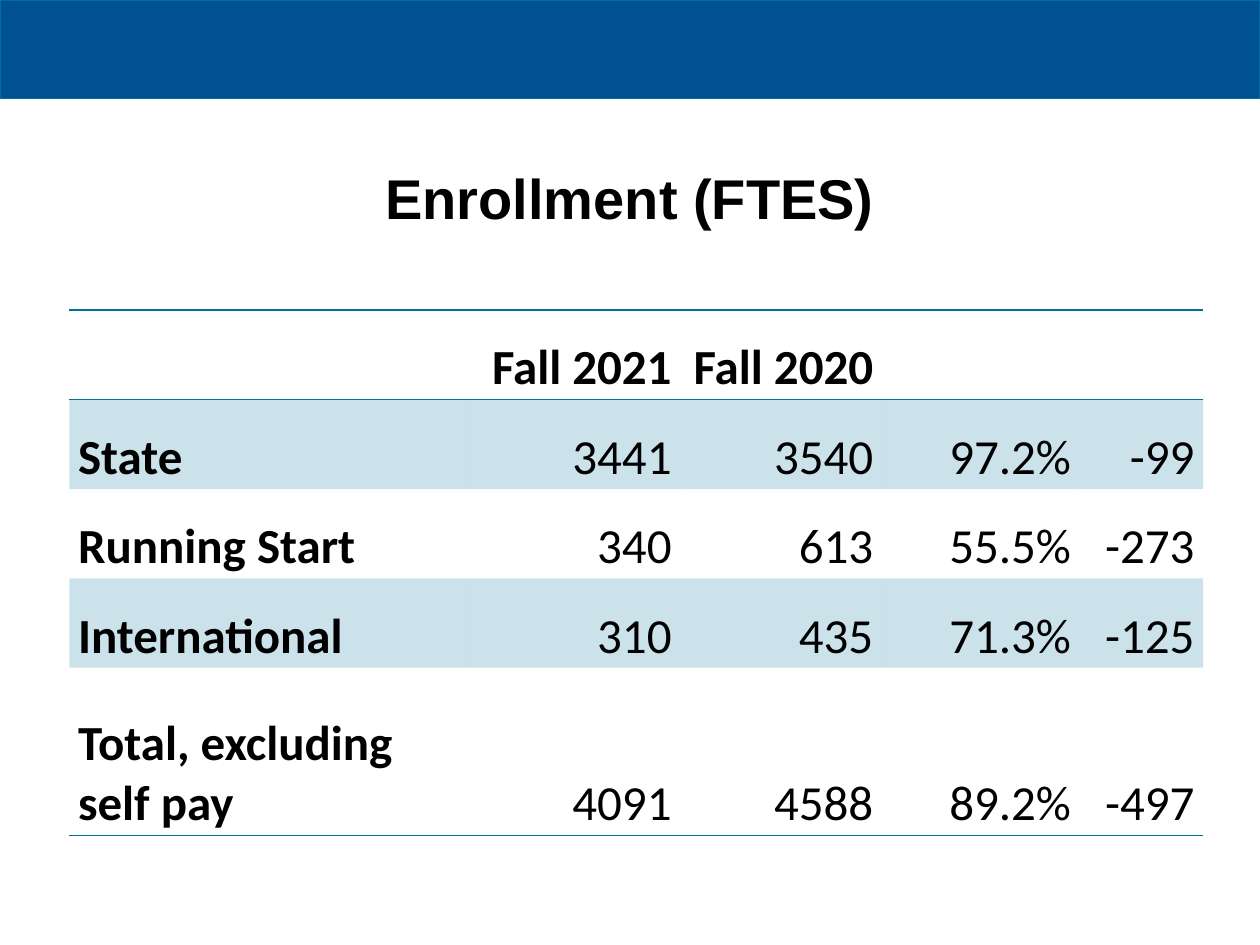
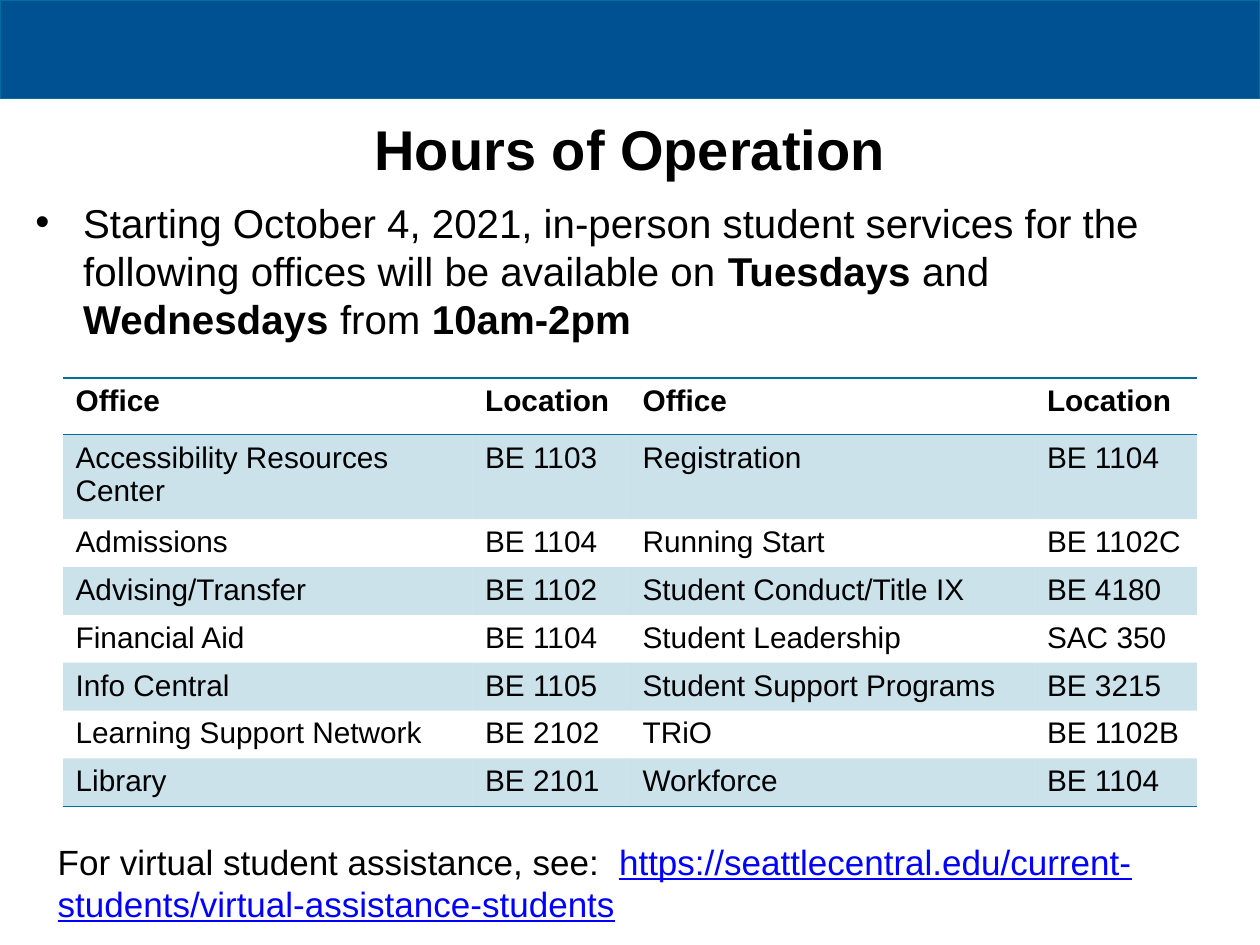
"""Build two college slides on enrollment and office hours."""
from dataclasses import dataclass

from lxml import etree
from pptx import Presentation
from pptx.dml.color import RGBColor
from pptx.enum.shapes import MSO_SHAPE
from pptx.enum.text import MSO_ANCHOR, MSO_AUTO_SIZE, PP_ALIGN
from pptx.oxml.ns import qn
from pptx.util import Emu, Pt

RECT = MSO_SHAPE.RECTANGLE
TOP, MIDDLE, BOTTOM = MSO_ANCHOR.TOP, MSO_ANCHOR.MIDDLE, MSO_ANCHOR.BOTTOM
LEFT, CENTER, RIGHT = PP_ALIGN.LEFT, PP_ALIGN.CENTER, PP_ALIGN.RIGHT
FIXED = MSO_AUTO_SIZE.NONE
SCALE = 9144
WIDE, HIGH = 1000, 750
PLAIN_GRID = "{2D5ABB26-0587-4C30-8999-92F81FD0307C}"
HOLD, LIST = 5, 1


@dataclass(frozen=True)
class Theme:
    ink: str = "000000"
    band: str = "005192"
    edge: str = "006F9B"
    rule: str = "00719F"
    link: str = "0000FF"
    tint: int = 20
    sans: str = "Arial"
    grid: str = "Calibri"
    title: int = 32
    count: int = 28
    body: int = 23
    note: int = 20
    cell: int = 17


def px(size):
    return Emu(size * SCALE)


def paint(run, size, face, color, bold=False, line=False):
    font = run.font
    font.size, font.name = Pt(size), face
    font.bold, font.underline = bold, line
    font.color.rgb = RGBColor.from_string(color)


class Deck:
    def __init__(self, theme):
        self.theme = theme
        self.show = Presentation()
        self.show.slide_width, self.show.slide_height = px(WIDE), px(HIGH)
        self.slide = None

    def page(self, kind, title, top):
        self.slide = self.show.slides.add_slide(self.show.slide_layouts[kind])
        head = self.slide.shapes.title
        self.place(head, 50, top, 900, 117)
        frame = head.text_frame
        frame.text = title
        frame.vertical_anchor = MIDDLE
        para = frame.paragraphs[0]
        para.alignment = CENTER
        paint(para.runs[0], self.theme.title, self.theme.sans, self.theme.ink, True)

    def place(self, shape, left, top, width, height):
        shape.left, shape.top = px(left), px(top)
        shape.width, shape.height = px(width), px(height)

    def band(self, height):
        bar = self.slide.shapes.add_shape(RECT, 0, 0, px(WIDE), px(height))
        bar.shadow.inherit = False
        bar.fill.solid()
        bar.fill.fore_color.rgb = RGBColor.from_string(self.theme.band)
        bar.line.color.rgb = RGBColor.from_string(self.theme.edge)
        bar.line.width = Pt(0.75)
        node = bar._element
        node.nvSpPr.cNvPr.set("id", "20")
        self.show.slide_master.shapes._spTree.insert(2, node)

    def phrase(self, para, parts, size):
        for text, look in parts:
            run = para.add_run()
            run.text = text
            paint(run, size, self.theme.sans, **{"color": self.theme.ink, **look})

    def point(self, box, parts):
        body = self.slide.placeholders[1]
        self.place(body, *box)
        frame = body.text_frame
        frame.auto_size = FIXED
        para = frame.paragraphs[0]
        props = para._p.get_or_add_pPr()
        props.set("marL", str(px(38)))
        props.set("indent", str(px(-38)))
        etree.SubElement(props, qn("a:buChar")).set("char", "•")
        para.space_before = Pt(0)
        self.phrase(para, parts, self.theme.body)

    def note(self, box, parts):
        shape = self.slide.shapes.add_textbox(*map(px, box))
        frame = shape.text_frame
        frame.word_wrap = True
        self.phrase(frame.paragraphs[0], parts, self.theme.note)

    def trim(self, cell, sides, tint):
        props = cell._tc.get_or_add_tcPr()
        if tint:
            cell.fill.solid()
            cell.fill.fore_color.rgb = RGBColor.from_string(self.theme.rule)
            shade = props.find(".//" + qn("a:srgbClr"))
            etree.SubElement(shade, qn("a:alpha")).set("val", str(self.theme.tint * 1000))
        else:
            cell.fill.background()
        for spot, side in enumerate(sides):
            line = etree.Element(qn("a:ln" + side), w=str(Pt(1)))
            fill = etree.SubElement(line, qn("a:solidFill"))
            etree.SubElement(fill, qn("a:srgbClr")).set("val", self.theme.rule)
            props.insert(spot, line)

    def table(self, left, top, cols, highs, rows, size, face, counts=False):
        shape = self.slide.shapes.add_table(
            len(rows), len(cols), px(left), px(top), px(sum(cols)), px(sum(highs)))
        grid = shape.table
        grid._tbl.tblPr.find(qn("a:tableStyleId")).text = PLAIN_GRID
        grid.first_row = grid.horz_banding = False
        for col, width in zip(grid.columns, cols):
            col.width = px(width)
        for row, high in zip(grid.rows, highs):
            row.height = px(high)
        last = len(rows) - 1
        for r, row in enumerate(rows):
            sides = "TB" if r == 0 else "B" if r == last else ""
            for c, text in enumerate(row):
                cell = grid.cell(r, c)
                self.trim(cell, sides, r % 2 == 1)
                cell.vertical_anchor = BOTTOM if counts else TOP
                if counts:
                    cell.margin_left = cell.margin_right = px(7)
                    cell.margin_top = cell.margin_bottom = px(1)
                cell.text_frame.text = text
                para = cell.text_frame.paragraphs[0]
                para.alignment = RIGHT if counts and c else LEFT
                bold = r == 0 or (counts and c == 0)
                for run in para.runs:
                    paint(run, size, face, self.theme.ink, bold)
        return grid


COUNTS = [
    ("", "Fall 2021", "Fall 2020", "", ""),
    ("State", "3441", "3540", "97.2%", "-99"),
    ("Running Start", "340", "613", "55.5%", "-273"),
    ("International", "310", "435", "71.3%", "-125"),
    ("Total, excluding self pay", "4091", "4588", "89.2%", "-497"),
]
ROOMS = [
    ("Office", "Location") * 2,
    ("Accessibility Resources Center", "BE 1103", "Registration", "BE 1104"),
    ("Admissions", "BE 1104", "Running Start", "BE 1102C"),
    ("Advising/Transfer", "BE 1102", "Student Conduct/Title IX", "BE 4180"),
    ("Financial Aid", "BE 1104", "Student Leadership", "SAC 350"),
    ("Info Central", "BE 1105", "Student Support Programs", "BE 3215"),
    ("Learning Support Network", "BE 2102", "TRiO", "BE 1102B"),
    ("Library", "BE 2101", "Workforce", "BE 1104"),
]


def main():
    theme = Theme()
    deck = Deck(theme)
    strong = {"bold": True}

    deck.page(HOLD, "Enrollment (FTES)", 98)
    deck.band(78)
    grid = deck.table(55, 246, [318, 167, 160, 157, 98], [71] * 4 + [133],
                      COUNTS, theme.count, theme.grid, counts=True)
    grid.cell(0, 3).merge(grid.cell(0, 4))

    deck.page(LIST, "Hours of Operation", 59)
    deck.point((18, 152, 963, 129), [
        ("Starting October 4, 2021, in-person student services for the "
         "following offices will be available on ", {}),
        ("Tuesdays", strong), (" and ", {}), ("Wednesdays", strong),
        (" from ", {}), ("10am-2pm", strong),
    ])
    deck.table(50, 300, [325, 125, 321, 129], [45, 67] + [38] * 6,
               ROOMS, theme.cell, theme.sans)
    deck.note((36, 662, 946, 77), [
        ("For virtual student assistance, see:  ", {}),
        ("https://seattlecentral.edu/current-students/virtual-assistance-students",
         {"color": theme.link, "line": True}),
    ])
    deck.show.save("out.pptx")


if __name__ == "__main__":
    main()
